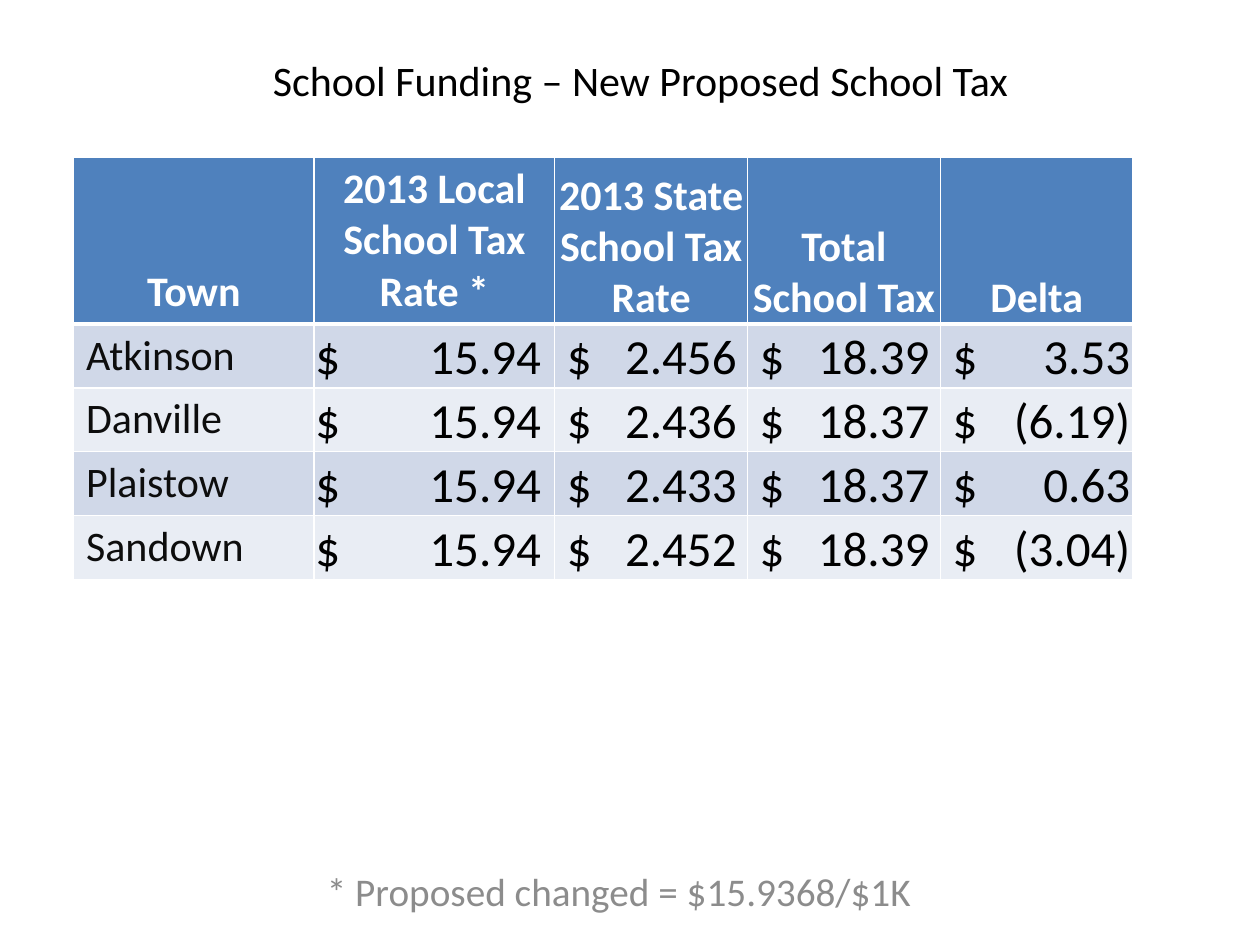
"""Build the slide on the proposed school tax by town."""
from lxml import etree
from pptx import Presentation, util as u
from pptx.dml.color import RGBColor
from pptx.enum import text
from pptx.oxml.ns import qn

TITLE = "School Funding – New Proposed School Tax"
NOTE = "* Proposed changed = $15.9368/$1K"
HEADS = ["Town", "2013 Local School Tax Rate *", "2013 State School Tax Rate",
         "Total School Tax", "Delta"]
ROWS = [
    ("Atkinson", "15.94", "2.456", "18.39", "3.53"),
    ("Danville", "15.94", "2.436", "18.37", "(6.19)"),
    ("Plaistow", "15.94", "2.433", "18.37", "0.63"),
    ("Sandown", "15.94", "2.452", "18.39", "(3.04)"),
]
THEME = {
    "font": "Calibri", "title": 24, "head": 24, "town": 24, "sum": 28, "note": 22.4,
    "black": "000000", "ink": "0D0D0D", "white": "FFFFFF", "grey": "8C8C8C",
    "blue": "4F81BD", "bands": ("D0D8E8", "E9EDF4"),
}
WIDTHS = [137.5, 137.5, 110.2, 110.2, 110.2]
HIGH = [95] + [36.5] * len(ROWS)
PADS = [7.2, 0.7, 7, 7, 7]
STOPS = [0, 129, 97, 97, 101.5]
BOTTOM = text.MSO_ANCHOR.BOTTOM
CENTER = text.PP_ALIGN.CENTER


def style(para, size, color, bold=False, align=None):
    font = para.font
    font.name, font.size, font.bold = THEME["font"], u.Pt(THEME[size]), bold
    font.color.rgb = RGBColor.from_string(THEME[color])
    para.alignment = align


def edge(cell, base):
    props = cell._tc.get_or_add_tcPr()
    for spot, (side, width) in enumerate(zip("LRTB", (1, 1, 1, base))):
        line = etree.Element(qn(f"a:ln{side}"), w=str(u.Pt(width)))
        fill = etree.SubElement(line, qn("a:solidFill"))
        etree.SubElement(fill, qn("a:srgbClr"), val=THEME["white"])
        props.insert(spot, line)


def pad(cell, left):
    cell.margin_left = u.Pt(left)
    cell.margin_top = cell.margin_right = u.Pt(0.7)
    cell.margin_bottom = 0
    cell.vertical_anchor = BOTTOM


def tab(para, stop):
    tabs = etree.SubElement(para._p.get_or_add_pPr(), qn("a:tabLst"))
    etree.SubElement(tabs, qn("a:tab"), pos=str(u.Pt(stop)), algn="r")


def paint(cell, color, base=1):
    cell.fill.solid()
    cell.fill.fore_color.rgb = RGBColor.from_string(color)
    edge(cell, base)


def add_grid(slide):
    frame = slide.shapes.add_table(len(HIGH), len(HEADS), u.Pt(42), u.Pt(90),
                                   u.Pt(sum(WIDTHS)), u.Pt(sum(HIGH)))
    grid = frame.table
    for col, width in zip(grid.columns, WIDTHS):
        col.width = u.Pt(width)
    for row, high in zip(grid.rows, HIGH):
        row.height = u.Pt(high)
    for c, head in enumerate(HEADS):
        cell = grid.cell(0, c)
        cell.text = head
        cell.vertical_anchor = BOTTOM
        if c > 1:
            pad(cell, 0.7)
        style(cell.text_frame.paragraphs[0], "head", "white", True, CENTER)
        paint(cell, THEME["blue"], 3)
    for r, row in enumerate(ROWS, 1):
        for c, value in enumerate(row):
            cell = grid.cell(r, c)
            para = cell.text_frame.paragraphs[0]
            if c:
                para.text = f"$\t{value}"
                pad(cell, PADS[c])
                tab(para, STOPS[c])
                style(para, "sum", "black")
            else:
                para.text = value
                style(para, "town", "ink")
            paint(cell, THEME["bands"][(r - 1) % 2])


def place(shape, left, top, width, height):
    shape.left, shape.top = u.Pt(left), u.Pt(top)
    shape.width, shape.height = u.Pt(width), u.Pt(height)


def main():
    deck = Presentation()
    deck.slide_width, deck.slide_height = u.Pt(720), u.Pt(540)
    slide = deck.slides.add_slide(deck.slide_layouts[5])
    title = slide.shapes.title
    place(title, 60, 18, 612, 55.5)
    title.text_frame.text = TITLE
    title.text_frame.vertical_anchor = text.MSO_ANCHOR.MIDDLE
    style(title.text_frame.paragraphs[0], "title", "black", align=CENTER)
    add_grid(slide)
    note = slide.shapes.add_textbox(u.Pt(102), u.Pt(492), u.Pt(504), u.Pt(30))
    note.text_frame.word_wrap = True
    note.text_frame.text = NOTE
    style(note.text_frame.paragraphs[0], "note", "grey", align=CENTER)
    deck.save("out.pptx")


if __name__ == "__main__":
    main()
